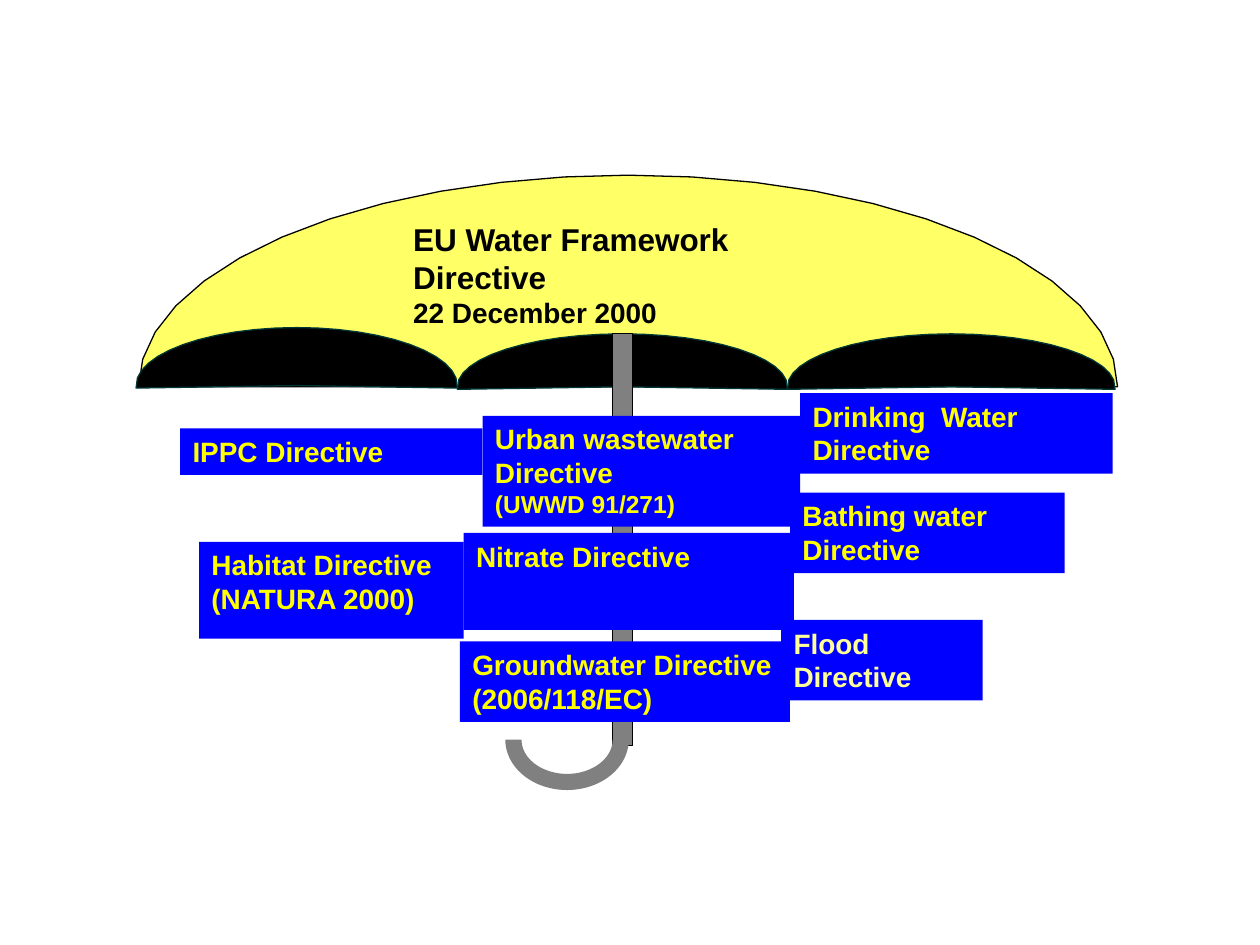
import math
from dataclasses import dataclass

from pptx import Presentation
from pptx.dml.color import RGBColor
from pptx.enum import shapes, text
from pptx.util import Inches, Pt


@dataclass(frozen=True)
class Theme:
    """Colours, type sizes and font of the slide."""
    font: str = "Arial"
    canopy: str = "FFFF66"
    black: str = "000000"
    dome_line: str = "003736"
    handle: str = "808080"
    label: str = "0000FF"
    label_text: str = "FFFF00"
    pale_text: str = "FFFF99"
    heading: int = 18
    body: int = 16
    detail: int = 14
    line: float = 0.75


THEME = Theme()

OUTER_DIRECTIVES = [
    (0, 0.28, 2.4, 0.37, [("IPPC Directive", THEME.body)], THEME.label_text),
    (4.92, 0, 2.48, 0.64, [("Drinking  Water Directive", THEME.body)], THEME.label_text),
    (4.84, 0.79, 2.18, 0.64, [("Bathing water Directive", THEME.body)], THEME.label_text),
    (0.15, 1.18, 2.1, 0.77,
     [("Habitat Directive", THEME.body), ("(NATURA 2000)", THEME.body)], THEME.label_text),
]

FRONT_DIRECTIVES = [
    (2.4, 0.18, 2.52, 0.88,
     [("Urban wastewater Directive", THEME.body), ("(UWWD 91/271)", THEME.detail)],
     THEME.label_text),
    (2.25, 1.11, 2.62, 0.77, [("Nitrate Directive", THEME.body)], THEME.label_text),
    (2.22, 1.97, 2.62, 0.64,
     [("Groundwater Directive (2006/118/EC)", THEME.body)], THEME.label_text),
    (4.77, 1.8, 1.6, 0.64, [("Flood Directive", THEME.body)], THEME.pale_text),
]


def style(shape, fill, line=None):
    """Set the fill and outline of a shape and remove its shadow."""
    shape.shadow.inherit = False
    shape.fill.solid()
    shape.fill.fore_color.rgb = RGBColor.from_string(fill)
    if line:
        shape.line.color.rgb = RGBColor.from_string(line)
        shape.line.width = Pt(THEME.line)
    else:
        shape.line.fill.background()


def add_preset(slide, kind, box, fill, line=None):
    """Add a styled preset shape in the given box."""
    shape = slide.shapes.add_shape(kind, *(Inches(length) for length in box))
    style(shape, fill, line)
    return shape


def add_label(slide, box, lines, color, fill, line=None):
    """Add a filled rectangle with bold, left-aligned paragraphs."""
    shape = add_preset(slide, shapes.MSO_SHAPE.RECTANGLE, box, fill, line)
    frame = shape.text_frame
    frame.word_wrap = True
    frame.vertical_anchor = text.MSO_ANCHOR.TOP
    for index, (wording, size) in enumerate(lines):
        paragraph = frame.add_paragraph() if index else frame.paragraphs[0]
        paragraph.alignment = text.PP_ALIGN.LEFT
        run = paragraph.add_run()
        run.text = wording
        run.font.name = THEME.font
        run.font.size = Pt(size)
        run.font.bold = True
        run.font.color.rgb = RGBColor.from_string(color)


def add_dome(slide, box, fill, line, drop=0.0, steps=24):
    """Add a half ellipse whose two ends hang below its centre by the drop."""
    left, top, width, height = box
    radius = width / 2
    center_x, center_y = left + radius, top + height
    angles = [math.pi * step / steps for step in range(1, steps)]
    arc = [(center_x - radius * math.cos(angle), center_y - height * math.sin(angle))
           for angle in angles]
    outline = arc + [(left + width, center_y + drop), (center_x, center_y)]
    builder = slide.shapes.build_freeform(Inches(left), Inches(center_y + drop))
    builder.add_line_segments([(Inches(x), Inches(y)) for x, y in outline], close=True)
    style(builder.convert_to_shape(), fill, line)


def add_umbrella(slide, left, top):
    """Draw the titled umbrella from its top left corner."""
    def place(x, y, width, height):
        """Shift a box to the umbrella's corner."""
        return left + x, top + y, width, height

    def add_underside(x, y, width, height):
        """Add one dark dome under the canopy."""
        add_dome(slide, place(x, y, width, height), THEME.black, THEME.dome_line, drop=0.02)

    add_dome(slide, place(0.02, 0, 7.77, 1.68), THEME.canopy, THEME.black)
    add_underside(2.55, 1.26, 2.62, 0.42)
    add_preset(slide, shapes.MSO_SHAPE.RECTANGLE, place(3.78, 1.26, 0.16, 3.27),
               THEME.handle, THEME.black)
    add_label(slide, place(2.1, 0.31, 3.79, 0.84),
              [("EU Water Framework Directive", THEME.heading),
               ("22 December 2000", THEME.body)],
              THEME.black, THEME.canopy, THEME.canopy)
    add_underside(0, 1.21, 2.55, 0.46)
    add_underside(5.17, 1.26, 2.6, 0.42)
    hook = add_preset(slide, shapes.MSO_SHAPE.BLOCK_ARC, place(2.93, 4.08, 0.98, 0.8),
                      THEME.handle)
    hook.adjustments[2] = 0.16
    hook.rotation = 180


def add_directives(slide, left, top, directives):
    """Place directive labels relative to the given corner."""
    for x, y, width, height, lines, color in directives:
        add_label(slide, (left + x, top + y, width, height), lines, color, THEME.label)


def main():
    """Build and save the presentation."""
    presentation = Presentation()
    presentation.slide_width = Inches(10)
    presentation.slide_height = Inches(7.5)
    slide = presentation.slides.add_slide(presentation.slide_layouts[6])
    add_directives(slide, 1.43, 3.12, OUTER_DIRECTIVES)
    add_umbrella(slide, 1.08, 1.39)
    add_directives(slide, 1.43, 3.12, FRONT_DIRECTIVES)
    presentation.save("out.pptx")


if __name__ == "__main__":
    main()
